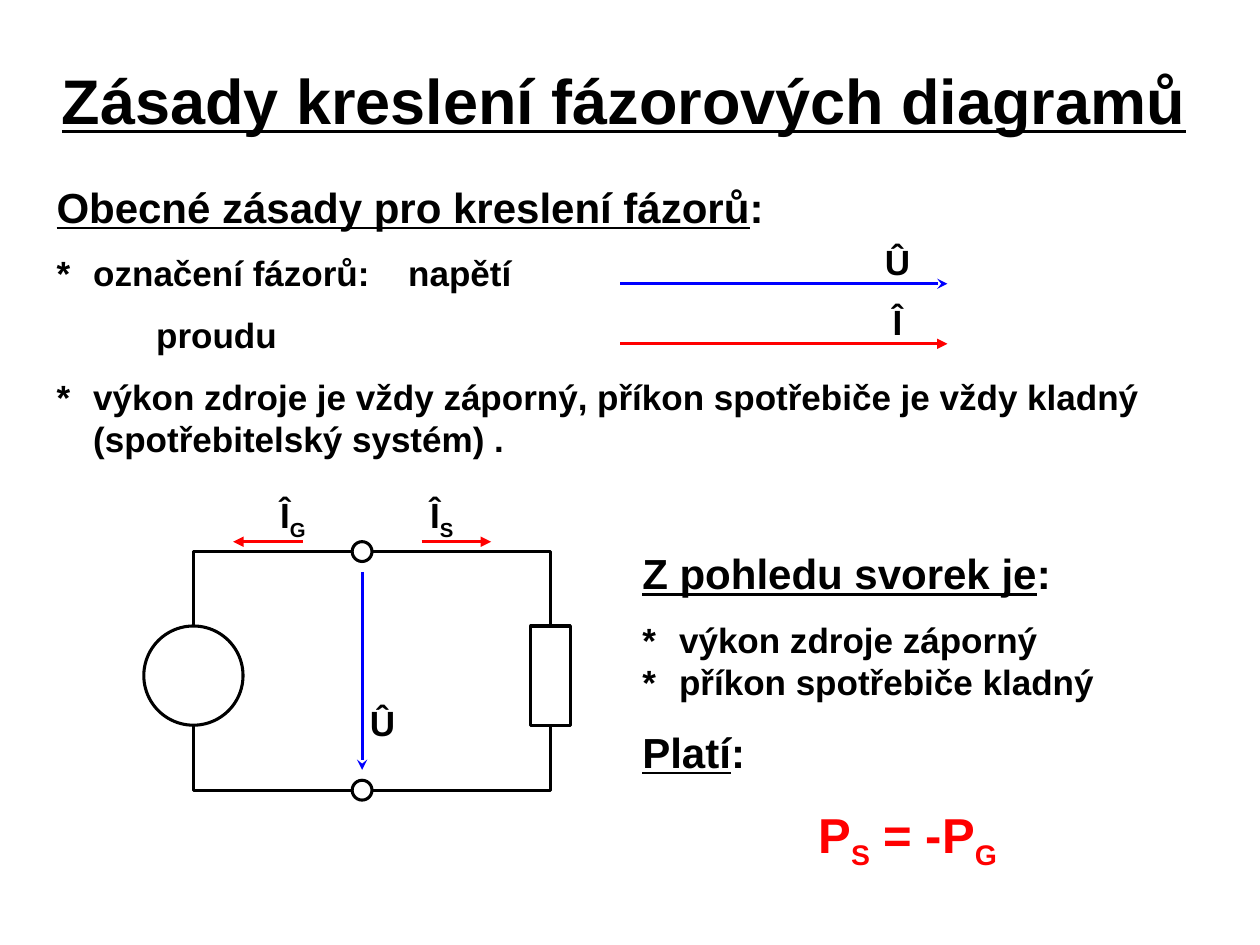
from lxml import etree
from pptx import Presentation
from pptx.dml.color import RGBColor
from pptx.enum.shapes import MSO_CONNECTOR, MSO_SHAPE
from pptx.enum.text import MSO_ANCHOR, PP_ALIGN
from pptx.oxml.ns import qn
from pptx.util import Cm, Pt

STRAIGHT, ELBOW = MSO_CONNECTOR.STRAIGHT, MSO_CONNECTOR.ELBOW
OVAL, RECTANGLE = MSO_SHAPE.OVAL, MSO_SHAPE.RECTANGLE
TOP, MIDDLE = MSO_ANCHOR.TOP, MSO_ANCHOR.MIDDLE
LEFT, CENTER = PP_ALIGN.LEFT, PP_ALIGN.CENTER
COLORS = {"black": "000000", "voltage": "0000FF", "current": "FF0000"}
HANGING = 0.74
TAB_STOPS = (0, 2.6, 7.8)
SPACE_RATIO = 0.57
LINE_WIDTH = 1.75


def rgb(name):
    """Return the named colour."""
    return RGBColor.from_string(COLORS[name])


def add_run(paragraph, text, size=20, color="black", underline=False, subscript=False):
    """Add a bold run with its format."""
    run = paragraph.add_run()
    run.text = text
    font = run.font
    font.name, font.size, font.bold = "Arial", Pt(size), True
    font.underline = underline
    font.color.rgb = rgb(color)
    if subscript:
        font._element.set("baseline", "-25000")


def format_paragraph(paragraph, align=LEFT, space_size=0, hanging=False, tabs=()):
    """Set alignment, space before, hanging indent and tab stops."""
    paragraph.alignment = align
    paragraph.space_before = Pt(round(space_size * SPACE_RATIO, 1))
    properties = paragraph._p.get_or_add_pPr()
    if hanging:
        properties.set("marL", str(Cm(HANGING)))
        properties.set("indent", str(-Cm(HANGING)))
    if tabs:
        tab_list = etree.SubElement(properties, qn("a:tabLst"))
        for position in tabs:
            etree.SubElement(tab_list, qn("a:tab"), pos=str(Cm(position)), algn="l")


def add_text(slide, left, top, width, height, paragraphs, anchor=TOP):
    """Add a text box from pairs of paragraph format and runs."""
    box = slide.shapes.add_textbox(Cm(left), Cm(top), Cm(width), Cm(height))
    frame = box.text_frame
    frame.word_wrap = True
    frame.vertical_anchor = anchor
    for index, (layout, runs) in enumerate(paragraphs):
        paragraph = frame.paragraphs[0] if index == 0 else frame.add_paragraph()
        format_paragraph(paragraph, **layout)
        for text, run_format in runs:
            add_run(paragraph, text, **run_format)


def add_label(slide, left, top, symbol, subscript="", width=1.19):
    """Add a centred phasor symbol with an optional subscript."""
    runs = [(symbol, {})]
    if subscript:
        runs.append((subscript, {"subscript": True}))
    add_text(slide, left, top, width, 1.09, [({"align": CENTER}, runs)])


def heading(text, space_size=0):
    """Return an underlined heading paragraph ending in a plain colon."""
    runs = [(text, {"size": 24, "underline": True}), (":", {"size": 24})]
    return {"hanging": True, "space_size": space_size}, runs


def item(text, space_size=20, tabs=()):
    """Return a paragraph with a hanging indent."""
    return {"hanging": True, "space_size": space_size, "tabs": tabs}, [(text, {})]


def add_connector(slide, kind, begin, end, color):
    """Add a connector without a shadow."""
    points = [Cm(value) for value in (*begin, *end)]
    connector = slide.shapes.add_connector(kind, *points)
    connector.line.color.rgb = rgb(color)
    connector.line.width = Pt(LINE_WIDTH)
    etree.SubElement(connector._element.spPr, qn("a:effectLst"))
    return connector


def add_phasor(slide, begin, end, color, head):
    """Add a straight arrow."""
    arrow = add_connector(slide, STRAIGHT, begin, end, color)
    etree.SubElement(arrow.line._get_or_add_ln(), qn("a:tailEnd"), type=head)


def add_component(slide, kind, center, width, height):
    """Add an unfilled outlined circuit symbol around a centre."""
    left, top = center[0] - width / 2, center[1] - height / 2
    shape = slide.shapes.add_shape(kind, Cm(left), Cm(top), Cm(width), Cm(height))
    shape.shadow.inherit = False
    shape.fill.background()
    shape.line.color.rgb = rgb("black")
    shape.line.width = Pt(LINE_WIDTH)
    return shape


def add_wire(slide, begin, end, terminal, terminal_site, component, component_site):
    """Add a one-bend wire glued to a terminal and a component."""
    wire = add_connector(slide, ELBOW, begin, end, "black")
    wire._element.spPr.find(qn("a:prstGeom")).set("prst", "bentConnector2")
    joints = wire._element.find(".//" + qn("p:cNvCxnSpPr"))
    for tag, shape, site in (("a:stCxn", terminal, terminal_site),
                             ("a:endCxn", component, component_site)):
        etree.SubElement(joints, qn(tag), id=str(shape.shape_id), idx=str(site))


def add_circuit(slide):
    """Draw the source, the load, the terminals and their phasors."""
    source_x, terminal_x, load_x, middle_y = 3.9, 7.3, 11.1, 13.62
    radius, half_height = 0.2, 1
    source = add_component(slide, OVAL, (source_x, middle_y), 2, 2)
    load = add_component(slide, RECTANGLE, (load_x, middle_y), 0.8, 2)
    for y, side, source_site, load_site in ((11.12, -1, 0, 0), (15.93, 1, 4, 2)):
        terminal = add_component(slide, OVAL, (terminal_x, y), 2 * radius, 2 * radius)
        end_y = middle_y + side * half_height
        add_wire(slide, (terminal_x - radius, y), (source_x, end_y),
                 terminal, 2, source, source_site)
        add_wire(slide, (terminal_x + radius, y), (load_x, end_y),
                 terminal, 6, load, load_site)
    add_phasor(slide, (terminal_x, 11.53), (terminal_x, 15.52), "voltage", "stealth")
    add_label(slide, 6.91, 14.02, "Û", width=1.6)
    for begin_x, end_x, label_x, name in ((6.1, 4.7, 5.31, "G"), (8.5, 9.9, 8.31, "S")):
        add_phasor(slide, (begin_x, 10.92), (end_x, 10.92), "current", "triangle")
        add_label(slide, label_x, 9.83, "Î", name)


def main():
    """Build and save the slide."""
    presentation = Presentation()
    presentation.slide_width, presentation.slide_height = Cm(25.4), Cm(19.05)
    slide = presentation.slides.add_slide(presentation.slide_layouts[6])
    title = [("Zásady kreslení fázorových diagramů", {"size": 36, "underline": True})]
    add_text(slide, 0.51, 0.71, 24.13, 2.59, [({"align": CENTER}, title)], anchor=MIDDLE)
    add_text(slide, 0.89, 3.53, 23.39, 5.92, [
        heading("Obecné zásady pro kreslení fázorů"),
        item("*\toznačení fázorů:\tnapětí", tabs=TAB_STOPS),
        item("\t\tproudu", tabs=TAB_STOPS),
        item("*\tvýkon zdroje je vždy záporný, příkon spotřebiče je vždy kladný "
             "(spotřebitelský systém) ."),
    ])
    for y, symbol, color, head in ((5.72, "Û", "voltage", "stealth"),
                                   (6.93, "Î", "current", "triangle")):
        add_phasor(slide, (12.5, y), (19.1, y), color, head)
        add_label(slide, 17.5, y - 1, symbol)
    add_circuit(slide)
    result = {"size": 28, "color": "current"}
    lowered = {**result, "subscript": True}
    add_text(slide, 12.7, 10.92, 11.2, 6.68, [
        heading("Z pohledu svorek je"),
        item("*\tvýkon zdroje záporný"),
        item("*\tpříkon spotřebiče kladný", space_size=0),
        heading("Platí", space_size=24),
        ({"align": CENTER, "hanging": True, "space_size": 28},
         [("P", result), ("S", lowered), (" = -P", result), ("G", lowered)]),
    ])
    presentation.save("out.pptx")


if __name__ == "__main__":
    main()
